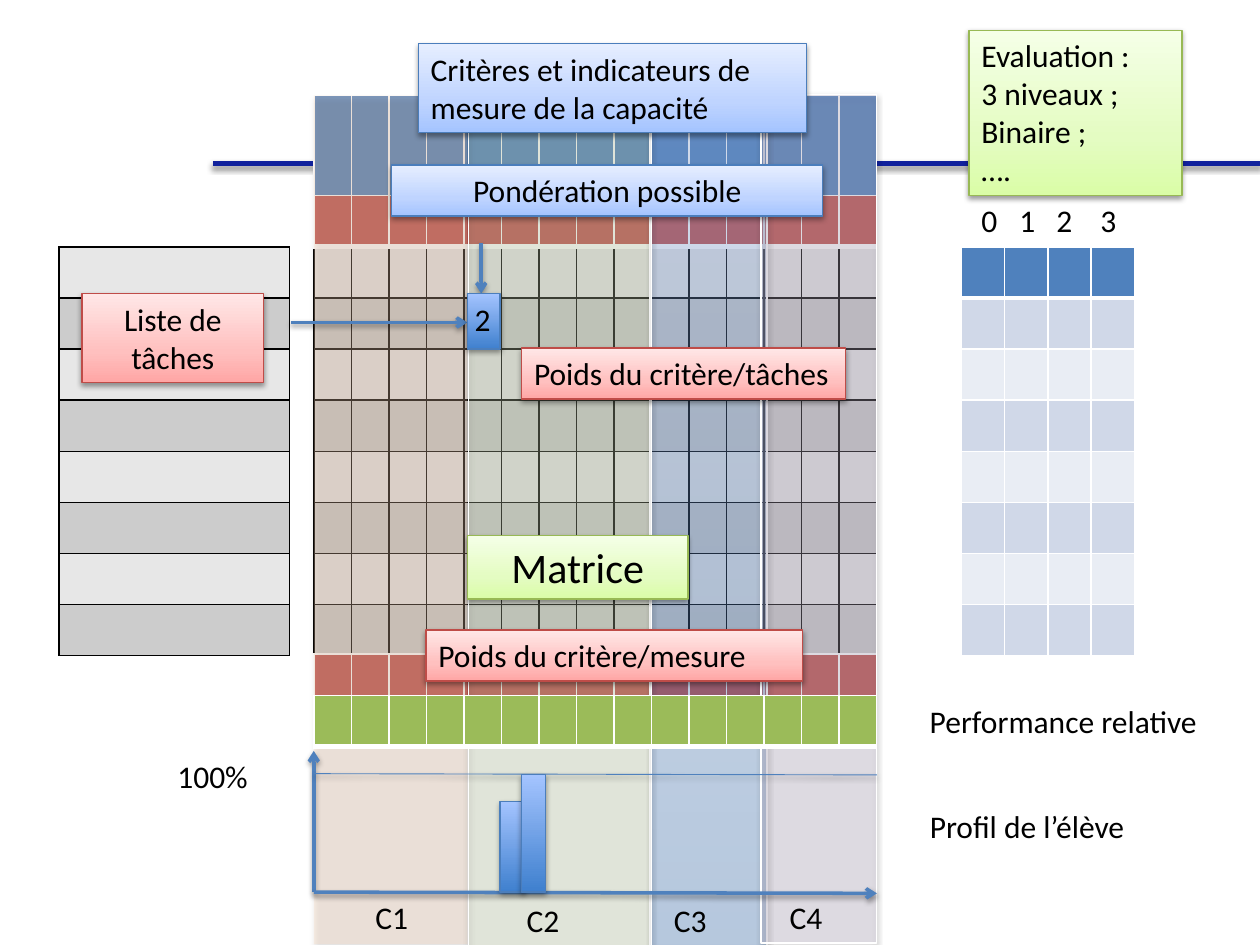
from pptx import Presentation
from pptx.enum import dml, shapes, text as txt
from pptx.oxml import parse_xml
from pptx.oxml.ns import nsdecls, qn
from pptx.util import Pt

NS = nsdecls("a")
SHADOW = f"""<a:effectLst {NS}><a:outerShdw blurRad="39400" dist="20300" dir="5400000"
rotWithShape="0"><a:srgbClr val="000000"><a:alpha val="38000"/></a:srgbClr>
</a:outerShdw></a:effectLst>"""
RED = ("FFA6A5", "FFC0BF", "FFE7E7")
GREEN = ("DAFDA7", "E4FCC2", "F5FFE7")
SKY = ("A4C4FF", "BFD4FF", "E6EEFF")
BLUE = ("3F80CE", "A4C4FF")
LEFT, WIDTH, RIGHT = 179.3, 321.8, 501.1
ROW = 29.2


def hue(*tones, alpha=100):
    """Fill element: solid for one tone, else a gradient rising from the first."""
    marks = [f'<a:srgbClr val="{tone}"><a:alpha val="{alpha * 1000}"/></a:srgbClr>'
             for tone in tones]
    if len(tones) == 1:
        return parse_xml(f"<a:solidFill {NS}>{marks[0]}</a:solidFill>")
    spots = (0, 35, 100) if len(tones) == 3 else (0, 100)
    stops = "".join(f'<a:gs pos="{spot * 1000}">{mark}</a:gs>'
                    for spot, mark in zip(spots, marks))
    return parse_xml(f'<a:gradFill {NS} rotWithShape="1"><a:gsLst>{stops}</a:gsLst>'
                     '<a:lin ang="16200000" scaled="0"/></a:gradFill>')


def put(words, x, y, w, h, fill=None, edge=None, alpha=100, size=18,
        mid=False, tabs=()):
    """Add a filled box, or a plain text box when there is no fill."""
    area = [Pt(n) for n in (x, y, w, h)]
    if fill:
        box = slide.shapes.add_shape(shapes.MSO_SHAPE.RECTANGLE, *area)
        props = box._element.spPr
        props.append(hue(*fill, alpha=alpha))
        if edge:
            box.line.width = Pt(0.75)
            props.find(qn("a:ln")).append(hue(edge))
        else:
            box.line.fill.background()
        props.append(parse_xml(SHADOW))
    else:
        box = slide.shapes.add_textbox(*area)
    frame = box.text_frame
    frame.word_wrap = True
    frame.vertical_anchor = txt.MSO_ANCHOR.TOP
    frame.text = words
    for para in frame.paragraphs:
        para.alignment = txt.PP_ALIGN.CENTER if mid else txt.PP_ALIGN.LEFT
        if tabs:
            stops = "".join(f'<a:tab pos="{Pt(tab)}" algn="l"/>' for tab in tabs)
            para._p.get_or_add_pPr().append(
                parse_xml(f"<a:tabLst {NS}>{stops}</a:tabLst>"))
        for run in para.runs:
            run.font.name = "Calibri"
            run.font.size = Pt(size)
            run.font.color.theme_color = dml.MSO_THEME_COLOR.TEXT_1


deck = Presentation()
deck.slide_width, deck.slide_height = Pt(720), Pt(540)
slide = deck.slides.add_slide(deck.slide_layouts[6])
tree = slide.shapes._spTree

# Tables: left, top, width, columns, row height, row fills, border, has header
grey = ["E7E7E7", "CCCCCC"] * 4
score = ["4F81BD"] + ["D0D8E8", "E9EDF4"] * 3 + ["D0D8E8"]
tables = [
    (LEFT, 141.1, WIDTH, 15, ROW, grey, "000000", False),
    (33.8, 141.1, 131.8, 1, ROW, grey, "000000", False),
    (LEFT, 54.7, WIDTH, 15, 84.2, ["4F81BD"], "FFFFFF", True),
    (LEFT, 111.6, WIDTH, 15, ROW, ["C0504D"], "FFFFFF", True),
    (LEFT, 373.7, WIDTH, 15, ROW, ["C0504D"], "FFFFFF", True),
    (549.4, 141.1, 98.9, 4, ROW, score, "FFFFFF", True),
    (LEFT, 397.4, WIDTH, 15, ROW, ["9BBB59"], "FFFFFF", True),
]
for x, y, w, cols, high, fills, edge, head in tables:
    grid = slide.shapes.add_table(len(fills), cols, Pt(x), Pt(y), Pt(w),
                                  Pt(high * len(fills)))
    for row, fill in enumerate(fills):
        grid.table.rows[row].height = Pt(high)
        for col in range(cols):
            props = grid.table.cell(row, col)._tc.get_or_add_tcPr()
            for side in "LRTB":
                thick = head and (row, side) in ((0, "B"), (1, "T"))
                line = parse_xml(f'<a:ln{side} {NS} w="{Pt(3 if thick else 1)}"/>')
                line.append(hue(edge))
                props.append(line)
            props.append(hue(fill))
green = grid

# Capacity bands
bands = [
    ("C1", LEFT, 54.7, 87.8, ("FCD5B5",), None, 207.4, 509.8),
    ("C2", 267.8, 55.4, 103.7, ("D7E4BD",), "FFFFFF", 293.8, 511.2),
    ("C3", 372.2, 55.4, 66.2, BLUE, "FFFFFF", 378, 511.2),
    ("C4", 434.9, 54, 66.2, ("CCC1DA",), "FFFFFF", 444.2, 509.8),
]
for name, x, y, w, fill, edge, tx, ty in bands:
    put("", x, y, w, 484.9, fill=fill, edge=edge, alpha=27)
    put(name, tx, ty, 56.9, ROW)

# Lines: start, end, colour, width, arrow
lines = [
    (121.7, 93.6, 720, 93.6, "11229D", 3, False),
    (166.3, 184.3, 267.1, 184.3, "4F81BD", 2, True),
    (275, 139, 275, 167.8, "4F81BD", 2, True),
    (LEFT, 509.8, LEFT, 429.1, "4F81BD", 2, True),
    (LEFT, 509.8, RIGHT, 510.5, "4F81BD", 2, True),
    (LEFT, 442.1, RIGHT, 442.8, "4F81BD", 0.5, False),
]
for *ends, tone, thick, arrow in lines:
    link = slide.shapes.add_connector(shapes.MSO_CONNECTOR.STRAIGHT,
                                      *[Pt(n) for n in ends])
    link.line.width = Pt(thick)
    props = link._element.spPr
    pen = props.find(qn("a:ln"))
    pen.append(hue(tone))
    if arrow:
        pen.append(parse_xml(f'<a:tailEnd {NS} type="arrow"/>'))
    props.append(parse_xml(SHADOW))
    if tone == "11229D":
        tree.insert(2, link._element)  # title rule lies behind everything

# Sample weight and profile bars
for x, y, w, h in [(267.1, 167.8, 18.7, 31.7), (285.8, 457.9, 13.7, 51.9),
                   (298.1, 442.8, 13.7, 67)]:
    put("", x, y, w, h, fill=BLUE, edge="4B7EBC")

put("2", 264.2, 167.8, 30.2, ROW)
put("0\t1\t2\t3", 553.7, 111.6, 94.3, ROW, tabs=(21.7, 42.9, 68))
put("100%", 94.3, 429.1, 72, ROW)
put("Profil de l’élève", 524.2, 457.9, 151.9, ROW)
put("Performance relative", 524.2, 397.4, 172.8, ROW)

put("Evaluation :\n3 niveaux ;\nBinaire ;\n….", 553.7, 17.3, 121.7, 94.3,
    fill=GREEN, edge="98B955")
put("Liste de tâches", 46.8, 167.8, 103.9, 50.9, fill=RED, edge="BF4C48", mid=True)
put("Poids du critère/tâches", 298.1, 198.9, 185, ROW, fill=RED, edge="BF4C48")
put("Matrice", 267.1, 306, 126, 36.4, fill=GREEN, edge="98B955", size=24, mid=True)
put("Poids du critère/mesure", 243.4, 360, 215.3, ROW, fill=RED, edge="BF4C48")
put("Pondération possible", 223.9, 94.3, 246.2, ROW, fill=SKY, edge="4B7EBC", mid=True)
put("Critères et indicateurs de mesure de la capacité", 239, 25, 221.8, 50.9,
    fill=SKY, edge="4B7EBC")

tree.append(green._element)  # performance row lies over the bands
deck.save("out.pptx")
